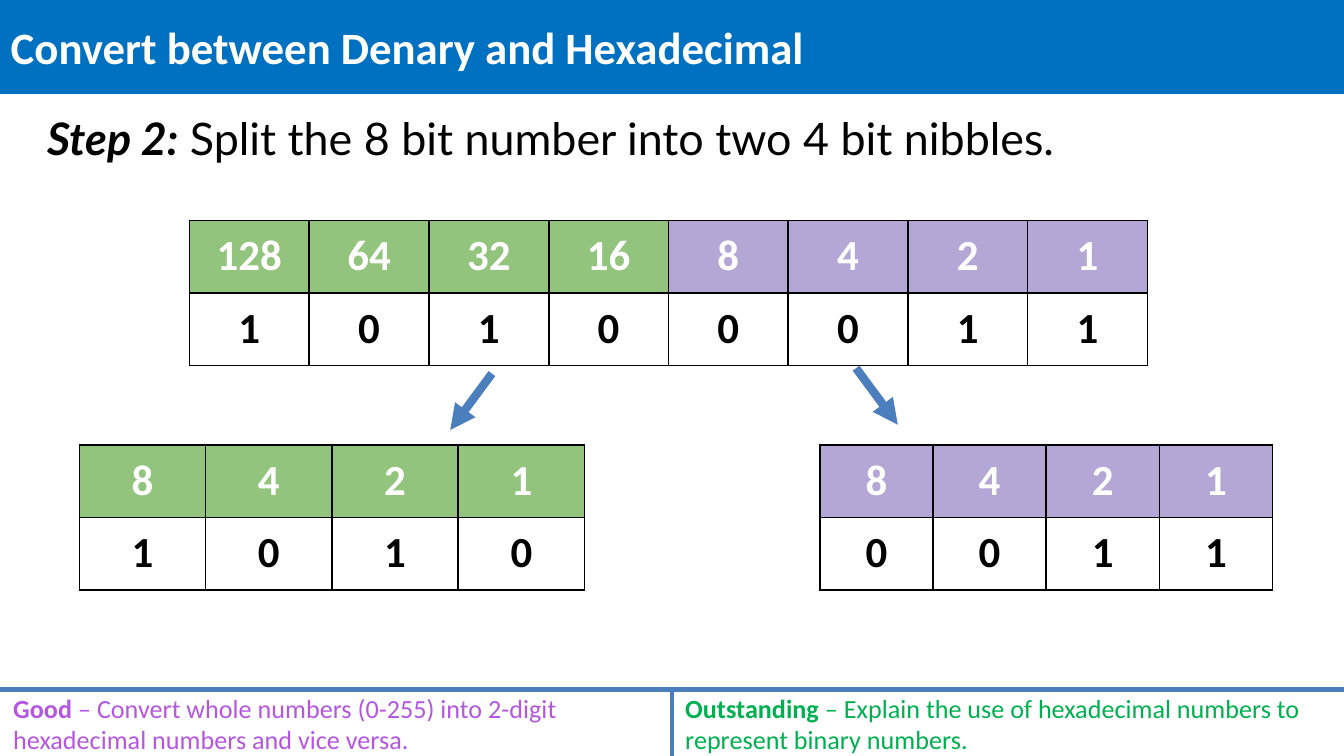
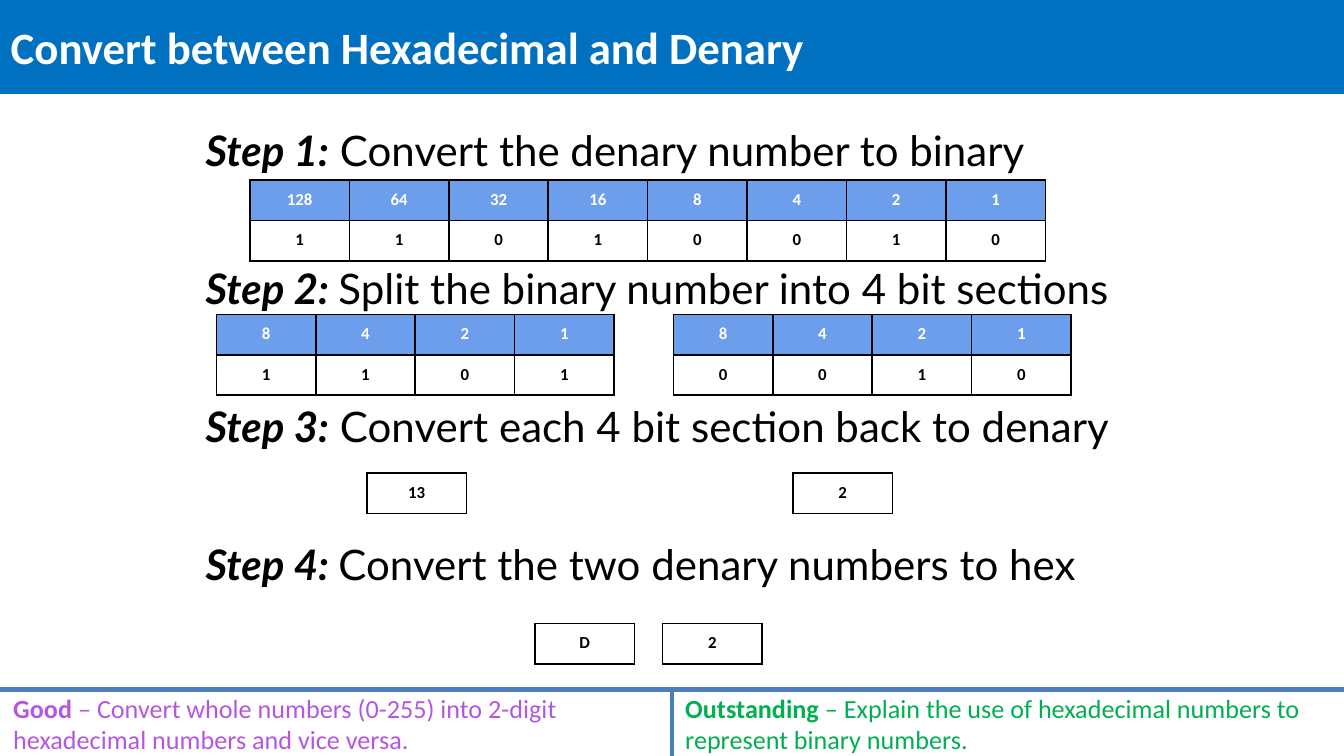
import pptx
import pptx.dml.color
import pptx.enum.dml
import pptx.enum.shapes
import pptx.enum.text
import pptx.oxml
import pptx.oxml.ns
import pptx.util
import lxml.etree

Inches = pptx.util.Inches
Pt = pptx.util.Pt
qn = pptx.oxml.ns.qn

# Shared look
BAND, RULE = "0070C0", "4B7EBC"
WHITE, BLACK = "FFFFFF", "000000"
GREEN, PURPLE, BLUE = "93C47D", "B4A7D6", "6D9EEB"
GOOD, OUTSTANDING = "B556E0", "00B050"
CELL_INSET = 0.07
TITLE_BOX = (-0.02, 0.08, 10, 0.53)
BAND_BOX = (0, 0, 10, 0.7)
FOOTER_BOX = (0, 5.13, 10, 0.5)
PLACE_VALUES = [128, 64, 32, 16, 8, 4, 2, 1]


def color(hex_text):
    return pptx.dml.color.RGBColor.from_string(hex_text)


def apply(target, values):
    for name, value in values.items():
        setattr(target, name, value)


def place(shape, box):
    names = ("left", "top", "width", "height")
    apply(shape, {name: Inches(value) for name, value in zip(names, box)})


def add_run(paragraph, text, size, hex_text, name="Calibri", bold=True, italic=False):
    run = paragraph.add_run()
    run.text = text
    apply(run.font, {"size": Pt(size), "name": name, "bold": bold, "italic": italic})
    run.font.color.rgb = color(hex_text)


def add_step(paragraph, label, text, size):
    add_run(paragraph, label, size, BLACK, "Lato", italic=True)
    add_run(paragraph, text, size, BLACK, "Lato", bold=False)


def add_text_box(slide, box):
    text_box = slide.shapes.add_textbox(*map(Inches, box))
    text_box.text_frame.word_wrap = True
    return text_box


def add_line(slide, start, end, width, arrow=False):
    line = slide.shapes.add_connector(
        pptx.enum.shapes.MSO_CONNECTOR.STRAIGHT, *map(Inches, start + end))
    line.line.color.rgb = color(RULE)
    line.line.width = Pt(width)
    if arrow:
        outline = line.element.spPr.find(qn("a:ln"))
        lxml.etree.SubElement(outline, qn("a:tailEnd"), type="triangle")
    lxml.etree.SubElement(line.element.spPr, qn("a:effectLst"))
    return line


# Title band and footer, kept on the slide master
def add_band(slide, box):
    band = slide.shapes.add_shape(
        pptx.enum.shapes.MSO_SHAPE.RECTANGLE, *map(Inches, box))
    band.shadow.inherit = False
    band.fill.solid()
    band.fill.fore_color.rgb = color(BAND)
    band.line.fill.background()
    return [band]


def add_footer(slide, box):
    left, top, width, height = box
    middle = left + width / 2
    goals = [
        (left, 4.92, GOOD, "Good",
         " – Convert whole numbers (0-255) into 2-digit hexadecimal numbers and vice versa."),
        (middle, 4.88, OUTSTANDING, "Outstanding",
         " – Explain the use of hexadecimal numbers to represent binary numbers."),
    ]
    parts = [add_line(slide, (left, top), (left + width, top), 2.25),
             add_line(slide, (middle, top), (middle, top + height), 2.25)]
    for goal_left, goal_width, hex_text, label, text in goals:
        text_box = add_text_box(slide, (goal_left, top - 0.03, goal_width, 0.57))
        paragraph = text_box.text_frame.paragraphs[0]
        add_run(paragraph, label, 14, hex_text)
        add_run(paragraph, text, 14, hex_text, bold=False)
        parts.append(text_box)
    return parts


def move_to_master(presentation, shapes):
    tree = presentation.slide_master.shapes.element
    for number, shape in enumerate(shapes, start=100):
        shape.element.xpath(".//p:cNvPr")[0].set("id", str(number))
        tree.append(shape.element)


def set_title(slide, text):
    title = slide.shapes.title
    place(title, TITLE_BOX)
    apply(title.text_frame, {
        "vertical_anchor": pptx.enum.text.MSO_ANCHOR.MIDDLE,
        "auto_size": pptx.enum.text.MSO_AUTO_SIZE.NONE})
    paragraph = title.text_frame.paragraphs[0]
    paragraph.alignment = pptx.enum.text.PP_ALIGN.LEFT
    add_run(paragraph, text, 24, WHITE)


# Bordered grid of numbers
def format_cell(cell, text, size, fill):
    properties = cell._tc.get_or_add_tcPr()
    for side in ("a:lnL", "a:lnR", "a:lnT", "a:lnB"):
        border = lxml.etree.SubElement(properties, qn(side), w=str(Pt(1)))
        solid = lxml.etree.SubElement(border, qn("a:solidFill"))
        lxml.etree.SubElement(solid, qn("a:srgbClr"), val=BLACK)
    if fill:
        cell.fill.solid()
        cell.fill.fore_color.rgb = color(fill)
    else:
        cell.fill.background()
    sides = ("left", "right", "top", "bottom")
    apply(cell, {f"margin_{side}": Inches(CELL_INSET) for side in sides})
    paragraph = cell.text_frame.paragraphs[0]
    paragraph.alignment = pptx.enum.text.PP_ALIGN.CENTER
    add_run(paragraph, str(text), size, WHITE if fill else BLACK)


def add_grid(slide, box, rows, size, fills=()):
    """Fills colour the heading row; without them every cell is plain."""
    column_count = len(rows[0])
    table = slide.shapes.add_table(len(rows), column_count, *map(Inches, box)).table
    apply(table, {"first_row": False, "horz_banding": False})
    for column in table.columns:
        column.width = Inches(box[2] / column_count)
    for row_index, values in enumerate(rows):
        table.rows[row_index].height = Inches(box[3] / len(rows))
        for column_index, value in enumerate(values):
            fill = fills[column_index] if fills and row_index == 0 else None
            format_cell(table.cell(row_index, column_index), value, size, fill)


def add_binary_grid(slide, box, bits, size, fills):
    add_grid(slide, box, [PLACE_VALUES[-len(bits):], bits], size, fills)


# Slide 1: one byte split into two nibbles
def fill_nibble_slide(slide, box):
    left, top = box[:2]
    set_title(slide, "Convert between Denary and Hexadecimal")
    body = slide.placeholders[1]
    place(body, box)
    body.text_frame.auto_size = pptx.enum.text.MSO_AUTO_SIZE.NONE
    paragraph = body.text_frame.paragraphs[0]
    properties = paragraph._p.get_or_add_pPr()
    for name in ("marL", "indent"):
        properties.set(name, "0")
    lxml.etree.SubElement(properties, qn("a:buNone"))
    add_step(paragraph, "Step 2:", " Split the 8 bit number into two 4 bit nibbles.", 24)

    byte = "10100011"
    grids = [
        (1.16, 0.87, 7.13, byte, [GREEN] * 4 + [PURPLE] * 4),
        (0.34, 2.54, 3.76, byte[:4], [GREEN] * 4),
        (5.85, 2.54, 3.37, byte[4:], [PURPLE] * 4),
    ]
    for offset_x, offset_y, width, bits, fills in grids:
        grid_box = (left + offset_x, top + offset_y, width, 1.08)
        add_binary_grid(slide, grid_box, bits, 23, fills)
    for offset_x, offset_y, run_x in [(3.41, 2.01, -0.31), (6.12, 1.97, 0.31)]:
        start = (left + offset_x, top + offset_y)
        add_line(slide, start, (start[0] + run_x, start[1] + 0.42), 4.5, arrow=True)


# Slide 2: four steps with their worked values
def fill_steps_slide(slide, box):
    left, top = box[:2]
    set_title(slide, "Convert between Hexadecimal and Denary")
    steps = [
        ("Step 1:", " Convert the denary number to binary"),
        ("Step 2: ", "Split the binary number into 4 bit sections"),
        ("Step 3:", " Convert each 4 bit section back to denary"),
        ("Step 4: ", "Convert the two denary numbers to hex"),
    ]
    frame = add_text_box(slide, box).text_frame
    sides = ("left", "right", "top", "bottom")
    apply(frame, {f"margin_{side}": Inches(CELL_INSET) for side in sides})
    for index, (label, text) in enumerate(steps):
        paragraph = frame.add_paragraph() if index else frame.paragraphs[0]
        paragraph.space_before = Pt(46.8 if index else 0)
        add_step(paragraph, label, text, 22.5)

    byte = "11010010"
    cell_width, cell_height = 0.74, 0.3
    for offset_x, offset_y, bits in [
            (0.4, 0.48, byte), (0.15, 1.48, byte[:4]), (3.55, 1.48, byte[4:])]:
        grid_box = (left + offset_x, top + offset_y,
                    cell_width * len(bits), cell_height * 2)
        add_binary_grid(slide, grid_box, bits, 9, [BLUE] * len(bits))
    for offset_x, offset_y, value in [
            (1.27, 2.66, "13"), (4.44, 2.66, "2"), (2.52, 3.78, "D"), (3.47, 3.78, "2")]:
        value_box = (left + offset_x, top + offset_y, cell_width, cell_height)
        add_grid(slide, value_box, [[value]], 9)


def main():
    presentation = pptx.Presentation()
    apply(presentation, {"slide_width": Inches(10), "slide_height": Inches(5.625)})
    layouts = presentation.slide_layouts
    nibble_slide = presentation.slides.add_slide(layouts.get_by_name("Title and Content"))
    steps_slide = presentation.slides.add_slide(layouts.get_by_name("Title Only"))
    shared = add_band(nibble_slide, BAND_BOX) + add_footer(nibble_slide, FOOTER_BOX)
    move_to_master(presentation, shared)
    fill_nibble_slide(nibble_slide, (0.25, 0.77, 9.45, 4.22))
    fill_steps_slide(steps_slide, (1.46, 0.86, 7.35, 3.89))
    presentation.save("out.pptx")


if __name__ == "__main__":
    main()
